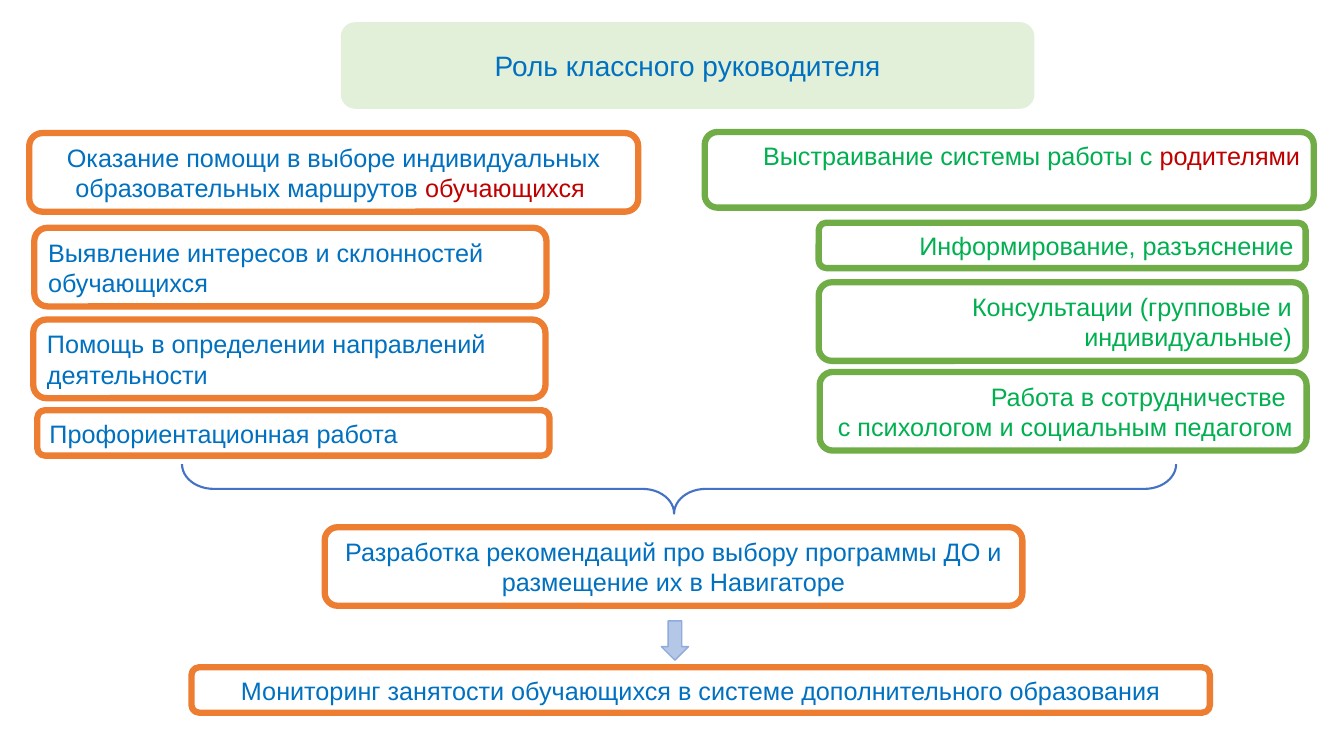
from pptx import Presentation
from pptx import util as u
from pptx.dml.color import RGBColor
from pptx.enum import shapes, text

BLUE, GREEN, RED = "0070C0", "00B050", "C00000"
ORANGE_LINE, GREEN_LINE = "ED7D31", "70AD47"
LEFT, CENTER, RIGHT = text.PP_ALIGN.LEFT, text.PP_ALIGN.CENTER, text.PP_ALIGN.RIGHT
TOP, MIDDLE = text.MSO_ANCHOR.TOP, text.MSO_ANCHOR.MIDDLE
KIND = shapes.MSO_SHAPE
TWO_LINES, ONE_LINE = 0.78, 0.45

STYLES = {
    "title": dict(fill="E2F0D9", line=None, color=BLUE, size=20, align=CENTER, anchor=MIDDLE),
    "goal": dict(fill="FFFFFF", line=ORANGE_LINE, color=BLUE, size=18, align=CENTER, anchor=MIDDLE),
    "pupils": dict(fill="FFFFFF", line=ORANGE_LINE, color=BLUE, size=18, align=LEFT, anchor=MIDDLE),
    "parents": dict(fill="FFFFFF", line=GREEN_LINE, color=GREEN, size=18, align=RIGHT, anchor=MIDDLE),
    "parents_head": dict(fill="FFFFFF", line=GREEN_LINE, color=GREEN, size=18, align=RIGHT, anchor=TOP),
}

BOXES = [
    ("title", (3.38, 0.22, 6.88, 0.86), [[("Роль классного руководителя", None)]]),
    ("goal", (0.29, 1.32, 6.04, TWO_LINES),
     [[("Оказание помощи в выборе индивидуальных образовательных маршрутов ", None),
       ("обучающихся ", RED)]]),
    ("parents_head", (6.99, 1.31, 6.04, 0.75),
     [[("Выстраивание системы работы с ", None), ("родителями", RED)]]),
    ("pupils", (0.34, 2.26, 5.08, TWO_LINES),
     [[("Выявление интересов и склонностей обучающихся", None)]]),
    ("pupils", (0.33, 3.17, 5.08, TWO_LINES),
     [[("Помощь в определении направлений деятельности", None)]]),
    ("pupils", (0.37, 4.07, 5.08, ONE_LINE), [[("Профориентационная работа", None)]]),
    ("parents", (8.12, 2.21, 4.83, ONE_LINE), [[("Информирование, разъяснение", None)]]),
    ("parents", (8.12, 2.8, 4.83, TWO_LINES),
     [[("Консультации (групповые и индивидуальные)", None)]]),
    ("parents", (8.13, 3.69, 4.83, TWO_LINES),
     [[("Работа в сотрудничестве ", None)], [("с психологом и социальным педагогом", None)]]),
    ("goal", (3.22, 5.23, 6.92, TWO_LINES),
     [[("Разработка рекомендаций про выбору программы ДО и размещение их в Навигаторе", None)]]),
    ("goal", (1.9, 6.62, 10.1, ONE_LINE),
     [[("Мониторинг занятости обучающихся в системе дополнительного образования", None)]]),
]


def paint(color_format, color):
    color_format.rgb = RGBColor.from_string(color)


def add_shape(slide, kind, place, fill, line, width):
    shape = slide.shapes.add_shape(kind, *map(u.Inches, place))
    shape.shadow.inherit = False
    if fill:
        shape.fill.solid()
        paint(shape.fill.fore_color, fill)
    else:
        shape.fill.background()
    if line:
        paint(shape.line.color, line)
        shape.line.width = u.Pt(width)
    else:
        shape.line.fill.background()
    return shape


def add_box(slide, style, place, paragraphs):
    shape = add_shape(slide, KIND.ROUNDED_RECTANGLE, place, style["fill"], style["line"], 4.5)
    frame = shape.text_frame
    for name, value in dict(word_wrap=True, vertical_anchor=style["anchor"]).items():
        setattr(frame, name, value)
    for index, runs in enumerate(paragraphs):
        paragraph = frame.add_paragraph() if index else frame.paragraphs[0]
        paragraph.alignment = style["align"]
        for words, color in runs:
            run = paragraph.add_run()
            run.text = words
            for name, value in dict(name="Arial", size=u.Pt(style["size"])).items():
                setattr(run.font, name, value)
            paint(run.font.color, color or style["color"])


def main():
    presentation = Presentation()
    presentation.slide_width = u.Inches(13.33)
    presentation.slide_height = u.Inches(7.5)
    slide = presentation.slides.add_slide(presentation.slide_layouts[6])
    for style, place, paragraphs in BOXES:
        add_box(slide, STYLES[style], place, paragraphs)

    brace = add_shape(slide, KIND.RIGHT_BRACE, (6.49, -0.08, 0.49, 9.86), None, "4472C4", 1.5)
    brace.rotation = 90
    brace.adjustments[0] = 0.64
    brace.adjustments[1] = 0.505
    add_shape(slide, KIND.DOWN_ARROW, (6.56, 6.16, 0.27, 0.39), "B4C7E7", "8FAADC", 1)
    presentation.save("out.pptx")


if __name__ == "__main__":
    main()
